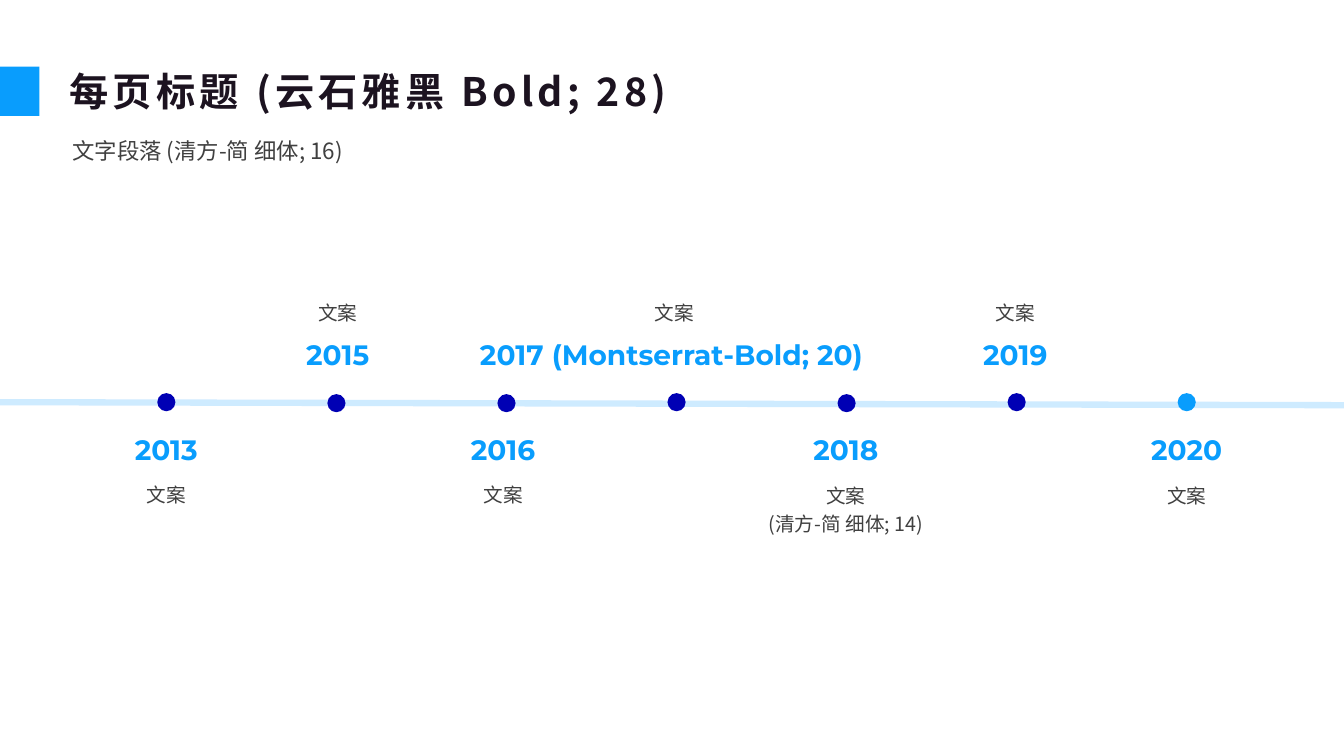
from dataclasses import dataclass

from lxml import etree
from pptx import Presentation
from pptx.dml.color import RGBColor
from pptx.enum.shapes import MSO_CONNECTOR, MSO_SHAPE
from pptx.enum.text import MSO_ANCHOR, MSO_AUTO_SIZE, PP_ALIGN
from pptx.oxml.ns import qn
from pptx.slide import Slide
from pptx.util import Inches, Pt

RECTANGLE = MSO_SHAPE.RECTANGLE
OVAL = MSO_SHAPE.OVAL
STRAIGHT = MSO_CONNECTOR.STRAIGHT
TOP, MIDDLE = MSO_ANCHOR.TOP, MSO_ANCHOR.MIDDLE
LEFT, CENTER = PP_ALIGN.LEFT, PP_ALIGN.CENTER
FIT_SHAPE = MSO_AUTO_SIZE.SHAPE_TO_FIT_TEXT
NO_FIT = MSO_AUTO_SIZE.NONE

COLORS = {
    "accent": "099DFD",
    "dot": "0000B4",
    "axis": "CEEBFF",
    "title": "1C1320",
    "body": "404040",
}
CHINESE_FONT = "Noto Sans CJK SC"
YEAR_FONT = "Montserrat"

SLIDE_WIDTH, SLIDE_HEIGHT = 13.33, 7.5
DOT_SIZE = 0.18
FIRST_DOT_LEFT, LAST_DOT_LEFT = 1.56, 11.68
LABEL_INSETS = (0.03, 0.05)


@dataclass(frozen=True)
class TextStyle:
    font: str
    size: int
    color: str
    bold: bool = False
    letter_spacing: int = 0
    line_spacing: float = 1.0
    align: PP_ALIGN = LEFT


@dataclass(frozen=True)
class Milestone:
    year: str
    center: float
    caption: tuple[str, ...]
    caption_width: float
    year_width: float = 0.8
    year_shift: float = 0
    above: bool = False
    caption_top: float = 4.7
    dot_top: float = 3.9
    dot_color: str = "dot"


TITLE = TextStyle(CHINESE_FONT, 28, "title", bold=True, letter_spacing=3)
SUBTITLE = TextStyle(CHINESE_FONT, 16, "body", line_spacing=1.5)
YEAR = TextStyle(YEAR_FONT, 20, "accent", bold=True, align=CENTER)
CAPTION = TextStyle(CHINESE_FONT, 14, "body", line_spacing=1.2, align=CENTER)

MILESTONES = [
    Milestone("2013", 1.65, ("文案",), 2.71),
    Milestone("2015", 3.35, ("文案",), 3.23, above=True,
              caption_top=2.89, dot_top=3.91),
    Milestone("2016", 4.99, ("文案",), 2.71, dot_top=3.91),
    Milestone("2017 (Montserrat-Bold; 20)", 6.69, ("文案",), 3.23,
              year_width=3.94, year_shift=-0.03, above=True, caption_top=2.89),
    Milestone("2018", 8.39, ("文案", "(清方-简 细体; 14)"), 3.71, dot_top=3.91),
    Milestone("2019", 10.07, ("文案",), 3.23, above=True, caption_top=2.89),
    Milestone("2020", 11.77, ("文案",), 2.32, caption_top=4.71,
              dot_color="accent"),
]
DOT_STEP = (LAST_DOT_LEFT - FIRST_DOT_LEFT) / (len(MILESTONES) - 1)


def rgb(name: str) -> RGBColor:
    return RGBColor.from_string(COLORS[name])


def add_solid(slide: Slide, kind: MSO_SHAPE, left: float, top: float,
              width: float, height: float, color: str) -> None:
    shape = slide.shapes.add_shape(
        kind, Inches(left), Inches(top), Inches(width), Inches(height))
    shape.shadow.inherit = False
    shape.fill.solid()
    shape.fill.fore_color.rgb = rgb(color)
    shape.line.fill.background()


def add_text(slide: Slide, lines: tuple[str, ...], style: TextStyle, left: float,
             top: float, width: float, height: float, insets: tuple[float, float],
             anchor: MSO_ANCHOR = TOP, wrap: bool = True,
             fit: MSO_AUTO_SIZE = FIT_SHAPE) -> None:
    """Add a text box with one paragraph per line; insets are (sides, top and bottom)."""
    box = slide.shapes.add_textbox(
        Inches(left), Inches(top), Inches(width), Inches(height))
    frame = box.text_frame
    frame.word_wrap = wrap
    frame.auto_size = fit
    frame.vertical_anchor = anchor
    frame.margin_left = frame.margin_right = Inches(insets[0])
    frame.margin_top = frame.margin_bottom = Inches(insets[1])
    for index, line in enumerate(lines):
        paragraph = frame.paragraphs[0] if index == 0 else frame.add_paragraph()
        paragraph.alignment = style.align
        paragraph.line_spacing = style.line_spacing
        run = paragraph.add_run()
        run.text = line
        run.font.name = style.font
        run.font.size = Pt(style.size)
        run.font.bold = style.bold
        run.font.color.rgb = rgb(style.color)
        properties = run.font._element
        etree.SubElement(properties, qn("a:ea")).set("typeface", style.font)
        if style.letter_spacing:
            properties.set("spc", str(style.letter_spacing * 100))


def add_axis(slide: Slide) -> None:
    axis = slide.shapes.add_connector(
        STRAIGHT, Inches(0), Inches(3.99), Inches(SLIDE_WIDTH), Inches(4.02))
    axis.line.color.rgb = rgb("axis")
    axis.line.width = Pt(4.5)
    etree.SubElement(axis._element.spPr, qn("a:effectLst"))


def add_milestone(slide: Slide, milestone: Milestone, index: int) -> None:
    year_left = milestone.center + milestone.year_shift - milestone.year_width / 2
    year_top = 3.3 if milestone.above else 4.24
    add_text(slide, (milestone.year,), YEAR, year_left, year_top,
             milestone.year_width, 0.44, LABEL_INSETS, wrap=False)
    add_text(slide, milestone.caption, CAPTION,
             milestone.center - milestone.caption_width / 2, milestone.caption_top,
             milestone.caption_width, 0.09 + 0.28 * len(milestone.caption),
             LABEL_INSETS, anchor=MIDDLE if milestone.above else TOP)
    add_solid(slide, OVAL, FIRST_DOT_LEFT + index * DOT_STEP, milestone.dot_top,
              DOT_SIZE, DOT_SIZE, milestone.dot_color)


def main() -> None:
    presentation = Presentation()
    presentation.slide_width = Inches(SLIDE_WIDTH)
    presentation.slide_height = Inches(SLIDE_HEIGHT)
    slide = presentation.slides.add_slide(presentation.slide_layouts[6])

    add_solid(slide, RECTANGLE, 0, 0.66, 0.39, 0.49, "accent")
    add_text(slide, ("文字段落 (清方-简 细体; 16)",), SUBTITLE,
             0.67, 1.18, 11.79, 0.47, (0.05, 0.05))
    add_text(slide, ("每页标题 (云石雅黑 Bold; 28)",), TITLE,
             0.67, 0.57, 11.79, 0.66, (0.02, 0.02), anchor=MIDDLE, fit=NO_FIT)
    add_axis(slide)
    for index, milestone in enumerate(MILESTONES):
        add_milestone(slide, milestone, index)

    presentation.save("out.pptx")


if __name__ == "__main__":
    main()
